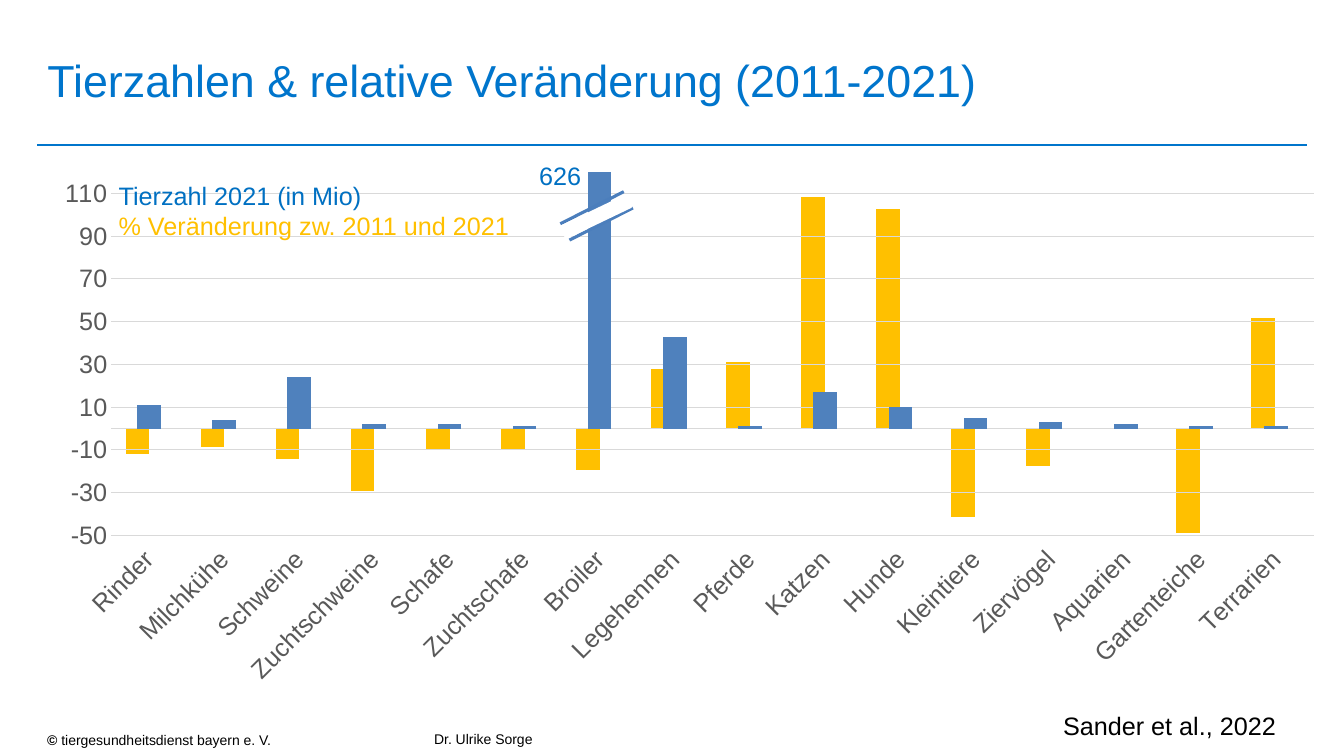
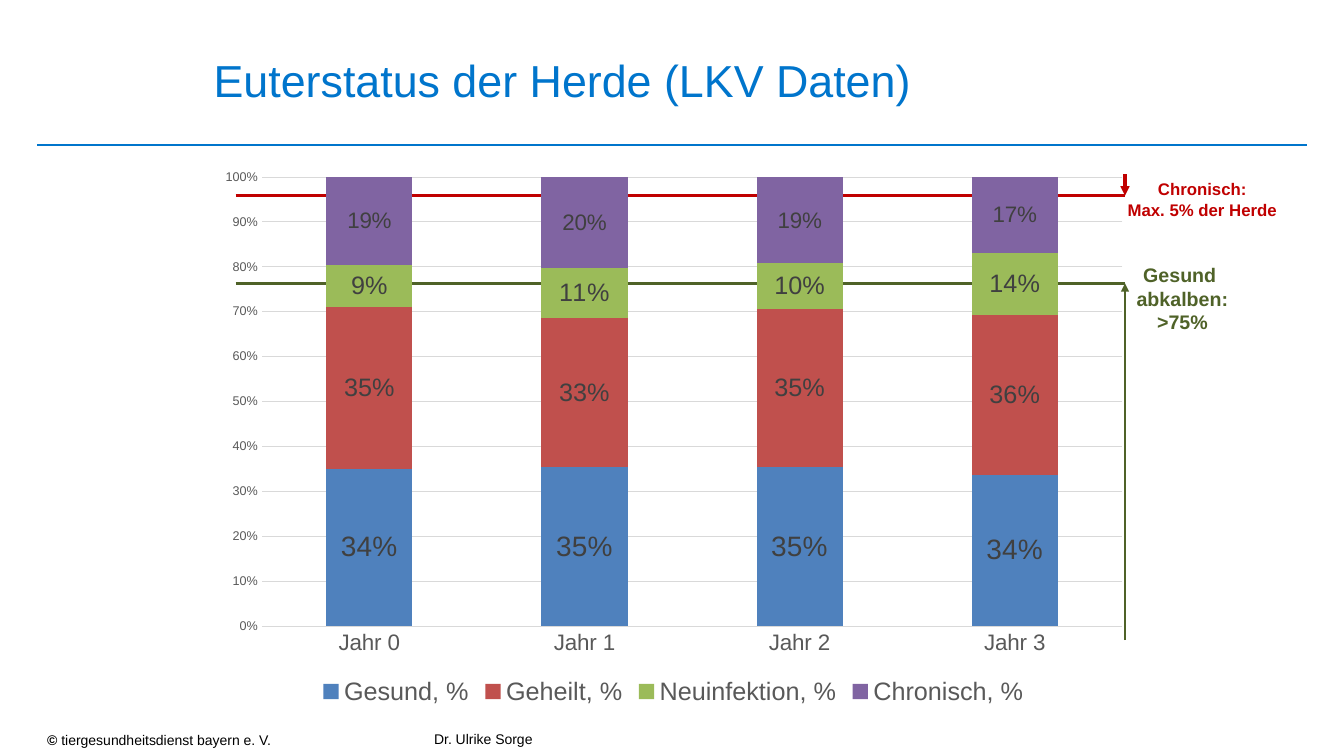
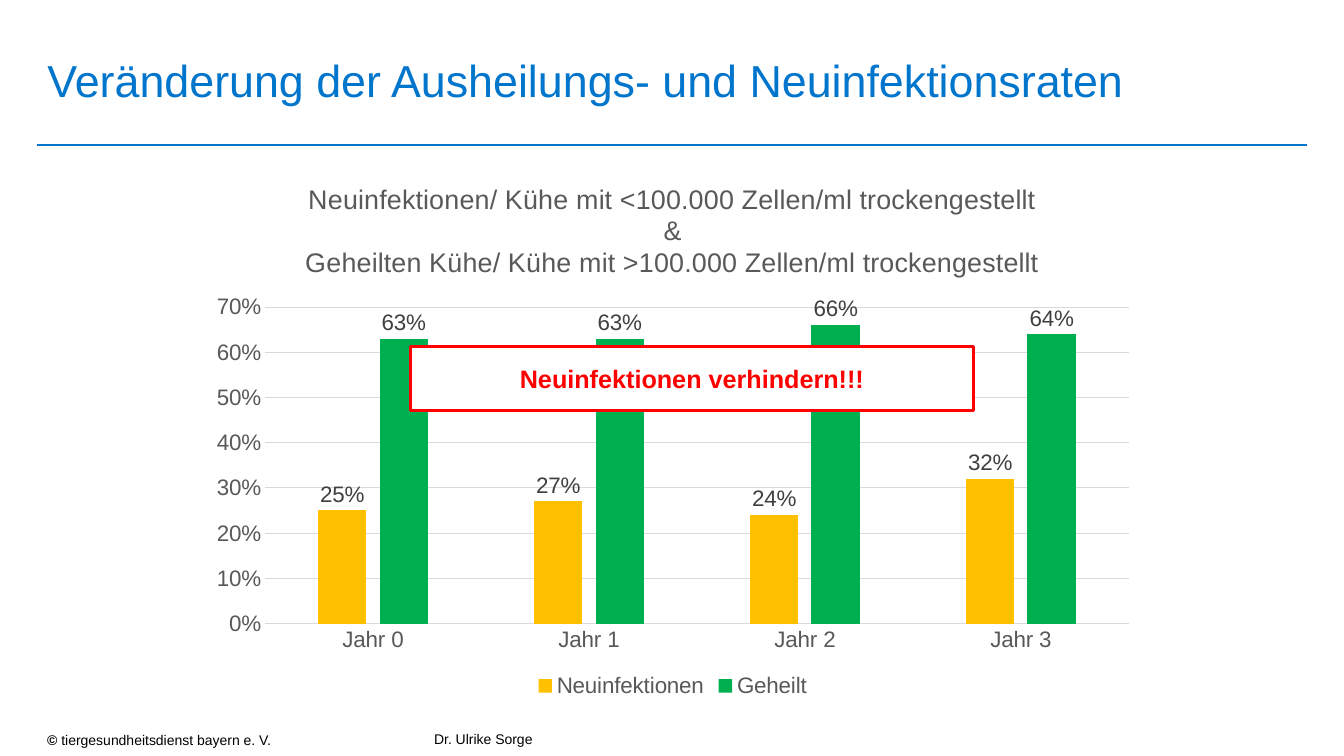
from lxml import etree
from pptx import Presentation
from pptx.chart.data import CategoryChartData
from pptx.dml.color import RGBColor
from pptx.enum.chart import XL_CHART_TYPE, XL_LABEL_POSITION, XL_LEGEND_POSITION
from pptx.enum.chart import XL_TICK_LABEL_POSITION, XL_TICK_MARK
from pptx.enum.shapes import MSO_CONNECTOR, MSO_SHAPE
from pptx.enum.text import MSO_ANCHOR, MSO_AUTO_SIZE, PP_ALIGN
from pptx.oxml import parse_xml
from pptx.oxml.ns import nsdecls, qn
from pptx.util import Cm, Pt

LEFT, CENTER = PP_ALIGN.LEFT, PP_ALIGN.CENTER
MIDDLE = MSO_ANCHOR.MIDDLE
FIXED = MSO_AUTO_SIZE.NONE
GROUP = XL_CHART_TYPE.COLUMN_CLUSTERED
STACK = XL_CHART_TYPE.COLUMN_STACKED_100
ABOVE = XL_LABEL_POSITION.OUTSIDE_END
INSIDE = XL_LABEL_POSITION.CENTER
BOTTOM = XL_LEGEND_POSITION.BOTTOM
LOW = XL_TICK_LABEL_POSITION.LOW
NONE = XL_TICK_MARK.NONE
STRAIGHT = MSO_CONNECTOR.STRAIGHT
RECT = MSO_SHAPE.RECTANGLE
FONT = "Arial"

HEX = {
    "title": "0075CC", "text": "000000", "white": "FFFFFF", "grid": "D9D9D9",
    "axis": "595959", "label": "404040", "count": "0070C2", "break": "4B7EBC",
    "amber": "FFC000", "blue": "4F81BD", "brick": "C0504D", "lime": "9BBB59",
    "violet": "8064A2", "green": "00B050", "olive": "4F6228", "dark": "C00000",
    "red": "FF0000",
}
RGB = {name: RGBColor.from_string(code) for name, code in HEX.items()}


def write(frame, size, paras, align=LEFT):
    frame.word_wrap = True
    frame.auto_size = FIXED
    for i, runs in enumerate(paras):
        para = frame.paragraphs[0] if i == 0 else frame.add_paragraph()
        para.alignment = align
        for text, color, bold in runs:
            run = para.add_run()
            run.text = text
            run.font.name = FONT
            run.font.size = Pt(size)
            run.font.bold = bold
            run.font.color.rgb = RGB[color]


def rule(slide, x1, y1, x2, y2, color, width, arrow=False):
    line = slide.shapes.add_connector(STRAIGHT, Cm(x1), Cm(y1), Cm(x2), Cm(y2))
    line.line.color.rgb = RGB[color]
    line.line.width = Pt(width)
    if arrow:
        etree.SubElement(line.line._get_or_add_ln(), qn("a:tailEnd"), type="triangle")
    etree.SubElement(line._element.spPr, qn("a:effectLst"))


deck = Presentation()
deck.slide_width = Cm(33.87)
deck.slide_height = Cm(19.05)

titles = [
    ("Tierzahlen & relative Veränderung (2011-2021)", 0.94, 28.8),
    ("Euterstatus der Herde (LKV Daten)", 5.13, 21.6),
    ("Veränderung der Ausheilungs- und Neuinfektionsraten", 0.94, 30.2),
]
for text, left, width in titles:
    slide = deck.slides.add_slide(deck.slide_layouts[5])
    title = slide.shapes.title
    title.left, title.top, title.width, title.height = Cm(left), Cm(0.5), Cm(width), Cm(3)
    title.text_frame.vertical_anchor = MIDDLE
    write(title.text_frame, 32, [[(text, "title", False)]])
    rule(slide, 0.94, 3.66, 32.94, 3.66, "title", 1.75)
    owner = slide.shapes.add_textbox(Cm(0.94), Cm(18.31), Cm(9.07), Cm(0.51))
    write(owner.text_frame, 10, [[("© ", "text", True),
                                  ("tiergesundheitsdienst bayern e. V.", "text", False)]])
    author = slide.shapes.add_textbox(Cm(10.69), Cm(18.29), Cm(12.12), Cm(0.61))
    write(author.text_frame, 10, [[("Dr. Ulrike Sorge", "text", False)]])

herd, udder, rates = deck.slides

for y, color in [(4.93, "dark"), (7.14, "olive")]:
    rule(udder, 5.94, y, 28.35, y, color, 2.25)

pets = ["Rinder", "Milchkühe", "Schweine", "Zuchtschweine", "Schafe", "Zuchtschafe",
        "Broiler", "Legehennen", "Pferde", "Katzen", "Hunde", "Kleintiere",
        "Ziervögel", "Aquarien", "Gartenteiche", "Terrarien"]
years = [f"Jahr {n}" for n in range(4)]

charts = [
    dict(slide=herd, kind=GROUP, box=(0.97, 4.11, 32.36, 10.01),
         plot=(0.048, 0.051, 0.935, 0.898), cats=pets, gap=219, lap=-27,
         span=(-48, 106), sizes=None, key=None, unit="General",
         series=[("% Veränderung zw. 2011 und 2021",
                  [-11, -8, -13, -27, -9, -9, -18, 26, 29, 100, 95, -38, -16, 0, -45, 48],
                  "amber", None)]),
    dict(slide=herd, kind=GROUP, box=(1.14, 3.91, 31.98, 13.79),
         plot=(0.052, 0.031, 0.948, 0.664), cats=pets, gap=219, lap=0,
         span=(-50, 120), sizes=(18, 18), key=None, unit="General",
         series=[("Tierzahl 2021 (in Mio)",
                  [11, 4, 24, 2, 2, 1, 626, 43, 1, 17, 10, 5, 3, 2, 1, 1],
                  "blue", None)]),
    dict(slide=udder, kind=STACK, box=(5.21, 3.99, 23.52, 13.92),
         plot=(0.059, 0.034, 0.922, 0.813), cats=years, gap=150, lap=100,
         span=(0, 1), sizes=(16, 9), key=18, unit="0%",
         series=[("Gesund, %", [0.34, 0.35, 0.35, 0.34], "blue", 20),
                 ("Geheilt, %", [0.35, 0.33, 0.35, 0.36], "brick", 18),
                 ("Neuinfektion, %", [0.09, 0.11, 0.1, 0.14], "lime", 18),
                 ("Chronisch, %", [0.19, 0.2, 0.19, 0.17], "violet", 16)]),
    dict(slide=rates, kind=GROUP, box=(4.98, 4.11, 23.95, 13.59),
         plot=(0.071, 0.267, 0.909, 0.587), cats=years, gap=219, lap=-27,
         span=(0, 0.7), sizes=(16, 16), key=16, unit="0%",
         series=[("Neuinfektionen", [0.25, 0.27, 0.24, 0.32], "amber", 16),
                 ("Geheilt", [0.63, 0.63, 0.66, 0.64], "green", 16)]),
]
for item in charts:
    data = CategoryChartData(number_format=item["unit"])
    data.categories = item["cats"]
    for name, vals, color, size in item["series"]:
        data.add_series(name, vals)
    box = [Cm(v) for v in item["box"]]
    chart = item["slide"].shapes.add_chart(item["kind"], *box, data).chart
    chart.font.name = FONT
    chart.font.size = Pt(10)
    chart.has_title = False

    space = chart._chartSpace
    space.find(qn("c:chart")).addnext(parse_xml(
        f'<c:spPr {nsdecls("c", "a")}><a:noFill/><a:ln><a:noFill/></a:ln></c:spPr>'))
    area = space.find(qn("c:chart")).find(qn("c:plotArea"))
    for old in area.findall(qn("c:layout")):
        area.remove(old)
    layout = etree.Element(qn("c:layout"))
    manual = etree.SubElement(layout, qn("c:manualLayout"))
    marks = [("layoutTarget", "inner"), ("xMode", "edge"), ("yMode", "edge")]
    for tag, val in marks + list(zip("xywh", item["plot"])):
        etree.SubElement(manual, qn(f"c:{tag}"), val=str(val))
    area.insert(0, layout)

    plot = chart.plots[0]
    plot.vary_by_categories = False
    plot.gap_width = item["gap"]
    plot.overlap = item["lap"]
    for bars, (name, vals, color, size) in zip(plot.series, item["series"]):
        bars.format.fill.solid()
        bars.format.fill.fore_color.rgb = RGB[color]
        if size:
            labels = bars.data_labels
            labels.show_value = True
            labels.number_format = "0%"
            labels.number_format_is_linked = False
            labels.position = INSIDE if item["kind"] == STACK else ABOVE
            labels.font.name = FONT
            labels.font.size = Pt(size)
            labels.font.color.rgb = RGB["label"]

    cat, val = chart.category_axis, chart.value_axis
    val.minimum_scale, val.maximum_scale = item["span"]
    val.has_major_gridlines = bool(item["sizes"])
    if item["sizes"]:
        for axis, size in zip((cat, val), item["sizes"]):
            axis.major_tick_mark = axis.minor_tick_mark = NONE
            axis.tick_labels.font.name = FONT
            axis.tick_labels.font.size = Pt(size)
            axis.tick_labels.font.color.rgb = RGB["axis"]
        val.tick_labels.number_format = item["unit"]
        val.tick_labels.number_format_is_linked = False
        val.major_unit = 20 if item["unit"] == "General" else 0.1
        val.format.line.fill.background()
        for line in (cat.format.line, val.major_gridlines.format.line):
            line.color.rgb = RGB["grid"]
            line.width = Pt(0.75)
    else:
        cat.visible = val.visible = False
    if item["cats"] is pets:
        cat.tick_label_position = LOW
        cat.tick_labels.font.name = FONT
        cat._element.find(qn("c:txPr")).find(qn("a:bodyPr")).set("rot", "-2700000")

    chart.has_legend = bool(item["key"])
    if item["key"]:
        chart.legend.position = BOTTOM
        chart.legend.include_in_layout = False
        chart.legend.font.name = FONT
        chart.legend.font.size = Pt(item["key"])
        chart.legend.font.color.rgb = RGB["axis"]

heads = ["Neuinfektionen/ Kühe mit <100.000 Zellen/ml trockengestellt", "&",
         "Geheilten Kühe/ Kühe mit >100.000 Zellen/ml trockengestellt"]
chart.has_title = True
chart.chart_title.include_in_layout = False
write(chart.chart_title.text_frame, 19.2,
      [[(head, "axis", False)] for head in heads], CENTER)

for x, y in [(14.12, 5.64), (14.35, 6.05)]:
    rule(herd, x, y, x + 1.6, y - 0.81, "break", 2.25)

gap = herd.shapes.add_shape(RECT, Cm(14.12), Cm(5.31), Cm(1.8), Cm(0.3))
gap.rotation = 334.4
call = rates.shapes.add_shape(RECT, Cm(10.34), Cm(8.74), Cm(14.2), Cm(1.6))
for shape, color, width in [(gap, "white", 2), (call, "red", 2.25)]:
    shape.shadow.inherit = False
    shape.fill.solid()
    shape.fill.fore_color.rgb = RGB["white"]
    shape.line.color.rgb = RGB[color]
    shape.line.width = Pt(width)
call.text_frame.vertical_anchor = MIDDLE
write(call.text_frame, 18, [[("Neuinfektionen verhindern!!!", "red", True)]], CENTER)

notes = [
    (herd, (13.34, 3.91, 2, 1), 18, LEFT, False, [("626", "count")]),
    (herd, (2.74, 4.42, 11, 2), 18, LEFT, False,
     [("Tierzahl 2021 (in Mio)", "count"), ("% Veränderung zw. 2011 und 2021", "amber")]),
    (herd, (26.54, 17.78, 6.4, 1.1), 18, LEFT, False, [("Sander et al., 2022", "text")]),
    (udder, (27.8, 4.39, 5, 1.4), 12, CENTER, True,
     [("Chronisch:", "dark"), ("Max. 5% der Herde", "dark")]),
    (udder, (28.05, 6.5, 3.5, 2.2), 14, CENTER, True,
     [("Gesund ", "olive"), ("abkalben:", "olive"), (">75%", "olive")]),
]
for slide, box, size, align, bold, lines in notes:
    note = slide.shapes.add_textbox(*[Cm(v) for v in box])
    write(note.text_frame, size, [[(text, color, bold)] for text, color in lines], align)

rule(udder, 28.35, 16.13, 28.35, 7.14, "olive", 1.5, True)
rule(udder, 28.35, 4.39, 28.35, 4.93, "dark", 2.25, True)

deck.save("out.pptx")
